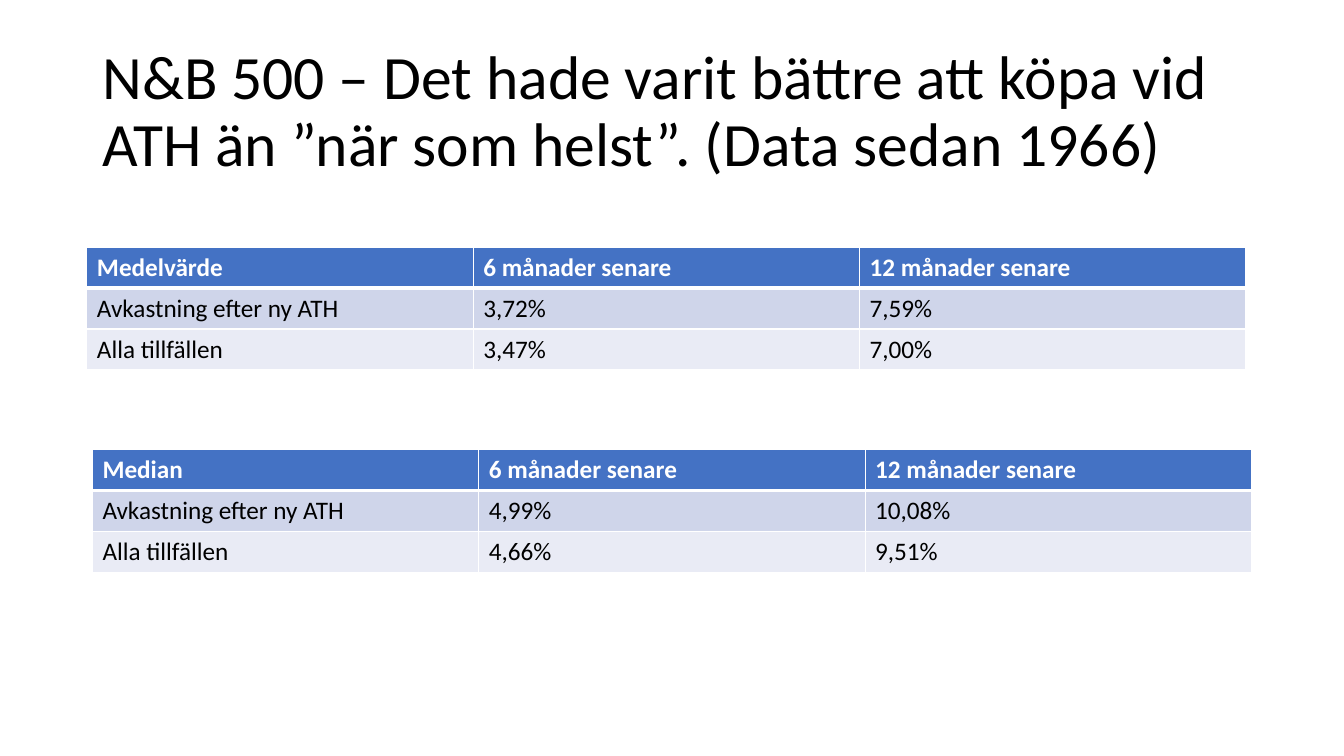
"""Builds a slide comparing index returns after an all-time high with returns at any time."""
import pptx
import pptx.dml.color
import pptx.enum.text
import pptx.oxml
import pptx.oxml.ns
import pptx.util
from pptx.util import Cm


def style_text(paragraph, size, color, bold=False):
    paragraph.font.name = "Calibri"
    paragraph.font.size = pptx.util.Pt(size)
    paragraph.font.bold = bold
    paragraph.font.color.rgb = pptx.dml.color.RGBColor.from_string(color)


def add_border(cell, side, points):
    cell._tc.get_or_add_tcPr().append(pptx.oxml.parse_xml(
        f'<a:ln{side} {pptx.oxml.ns.nsdecls("a")} w="{pptx.util.Pt(points)}">'
        f'<a:solidFill><a:srgbClr val="FFFFFF"/></a:solidFill></a:ln{side}>'))


presentation = pptx.Presentation()
presentation.slide_width = Cm(33.87)
presentation.slide_height = Cm(19.05)
slide = presentation.slides.add_slide(presentation.slide_layouts[6])

title = slide.shapes.add_textbox(Cm(2.33), Cm(1.01), Cm(29.21), Cm(3.68))
title.text_frame.word_wrap = True
title.text_frame.vertical_anchor = pptx.enum.text.MSO_ANCHOR.MIDDLE
paragraph = title.text_frame.paragraphs[0]
paragraph.text = "N&B 500 – Det hade varit bättre att köpa vid ATH än ”när som helst”. (Data sedan 1966)"
paragraph.line_spacing = 0.9
style_text(paragraph, 44, "000000")

row_fills = ["4472C4", "CFD5EA", "E9EBF5"]
return_tables = [
    ("Medelvärde", 2.19, 6.23, ["3,72%", "7,59%"], ["3,47%", "7,00%"]),
    ("Median", 2.33, 11.33, ["4,99%", "10,08%"], ["4,66%", "9,51%"]),
]

for measure, left, top, high_returns, all_returns in return_tables:
    rows = [
        [measure, "6 månader senare", "12 månader senare"],
        ["Avkastning efter ny ATH", *high_returns],
        ["Alla tillfällen", *all_returns],
    ]
    table = slide.shapes.add_table(3, 3, Cm(left), Cm(top), Cm(29.21), Cm(3.09)).table
    for row_index, (row, fill) in enumerate(zip(rows, row_fills)):
        is_header = row_index == 0
        for column_index, text in enumerate(row):
            cell = table.cell(row_index, column_index)
            cell.text = text
            style_text(cell.text_frame.paragraphs[0], 18, "FFFFFF" if is_header else "000000", is_header)
            for side in "LRTB":
                thick = (row_index, side) in [(0, "B"), (1, "T")]
                add_border(cell, side, 3 if thick else 1)
            cell.fill.solid()
            cell.fill.fore_color.rgb = pptx.dml.color.RGBColor.from_string(fill)

presentation.save("out.pptx")
